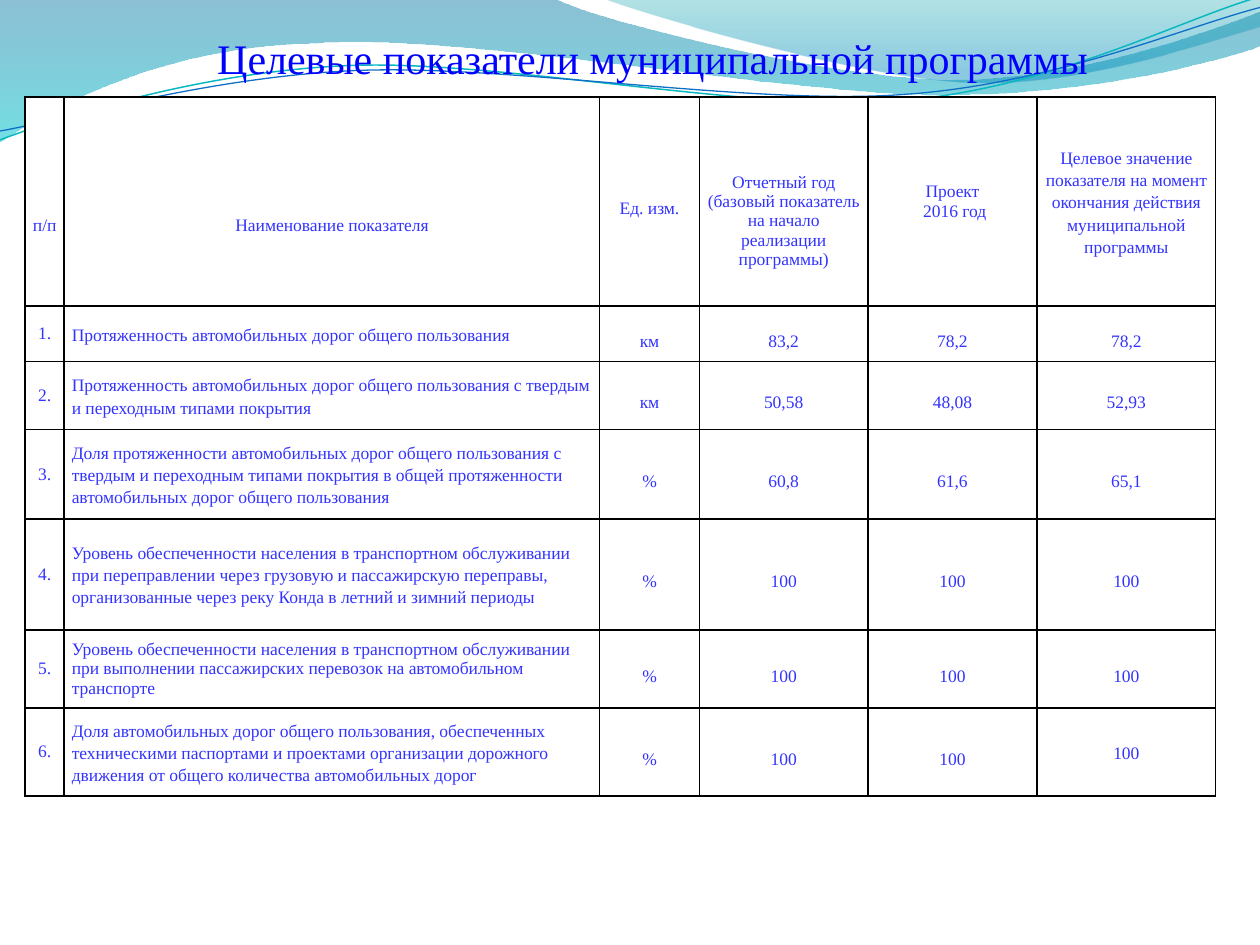
from dataclasses import dataclass
from math import cos, radians, sin

from lxml.etree import SubElement
from pptx import Presentation
from pptx.dml.color import RGBColor
from pptx.enum.text import MSO_ANCHOR, PP_ALIGN
from pptx.oxml.ns import qn
from pptx.util import Inches, Pt


@dataclass(frozen=True)
class Theme:
    font: str = "Times New Roman"
    title_size: float = 24
    cell_size: float = 10
    title_color: str = "0000FF"
    cell_color: str = "3333FF"
    cell_fill: str = "FFFFFF"
    border: str = "000000"
    border_width: float = 1
    line_pitch: float = 19.6
    loose: float = 1.15


THEME = Theme()

# Wave outlines in inches: a start point, then lines (1 point) and Bezier curves (3 points)
BANDS = [
    ((0, 0), [
        [(4.4, -0.01)],
        [(4.76, 0.17), (6.64, 0.63), (7.58, 0.63)],
        [(8.53, 0.63), (9.58, 0.26), (10, 0.09)],
        [(10.01, 0.36)],
        [(9.83, 0.44), (8.7, 0.76), (7.46, 0.75)],
        [(6.22, 0.75), (3.82, 0.28), (2.57, 0.34)],
        [(1.29, 0.36), (0.46, 0.83), (-0.01, 1.13)],
    ], [(0, "0074A1", 45), (1, "00C6CF", 55)]),
    ((4.79, -0.01), [
        [(5.09, 0.11), (6.82, 0.62), (7.69, 0.65)],
        [(8.56, 0.69), (9.61, 0.32), (10, 0.21)],
        [(10, 0)],
    ], [(0, "00A1A9", 30), (0.8, "008BBF", 45)]),
]
# Strands also have a centre, about which they are tilted
STRANDS = [
    ((0, 1.11), [
        [(0.48, 0.93), (1.58, 0.57), (2.77, 0.52)],
        [(3.95, 0.47), (5.93, 0.89), (7.13, 0.8)],
        [(8.33, 0.71), (9.38, 0.15), (9.98, -0.02)],
    ], (4.99, 0.58), "0AB8BF", 0.85),
    ((0, 1.04), [
        [(0.47, 0.96), (1.64, 0.61), (2.83, 0.56)],
        [(4.03, 0.51), (5.97, 0.84), (7.17, 0.75)],
        [(8.36, 0.67), (9.41, 0.21), (10, 0.06)],
    ], (5, 0.59), "0F6FC6", 0.75),
]
STRAND_TILT = -2.7

TITLE = "Целевые показатели муниципальной программы"
COLUMN_WIDTHS = [0.31, 4.25, 0.79, 1.34, 1.34, 1.42]
ROW_HEIGHTS = [1.66, 0.44, 0.54, 0.71, 0.88, 0.62, 0.7]
INDICATORS = [
    ["п/п", "Наименование показателя", "Ед. изм.",
     "Отчетный год\n(базовый показатель на начало реализации программы)",
     "Проект\n 2016 год",
     "Целевое значение показателя на момент окончания действия муниципальной программы"],
    ["1.", "Протяженность автомобильных дорог общего пользования",
     "км", "83,2", "78,2", "78,2"],
    ["2.", "Протяженность автомобильных дорог общего пользования с твердым и переходным "
     "типами покрытия", "км", "50,58", "48,08", "52,93"],
    ["3.", "Доля протяженности автомобильных дорог общего пользования с твердым и переходным "
     "типами покрытия в общей протяженности автомобильных дорог общего пользования",
     "%", "60,8", "61,6", "65,1"],
    ["4.", "Уровень обеспеченности населения в транспортном обслуживании при переправлении "
     "через грузовую и пассажирскую переправы, организованные через реку Конда в летний "
     "и зимний периоды", "%", "100", "100", "100"],
    ["5.", "Уровень обеспеченности населения в транспортном обслуживании при выполнении "
     "пассажирских перевозок на автомобильном транспорте", "%", "100", "100", "100"],
    ["6.", "Доля автомобильных дорог общего пользования, обеспеченных техническими паспортами "
     "и проектами организации дорожного движения от общего количества автомобильных дорог",
     "%", "100", "100", "100"],
]

# Line spacing by column, and the cells that depart from it
PITCH = Pt(THEME.line_pitch)
COLUMN_SPACING = [1.0, THEME.loose, PITCH, PITCH, PITCH, PITCH]
CELL_SPACING = {(0, 0): PITCH, (0, 1): PITCH, (0, 3): 1.0, (0, 4): 1.0,
                (0, 5): THEME.loose, (5, 1): 1.0, (6, 5): THEME.loose}
FLUSH_COLUMNS = (2, 5)
HEADER_DROP = {0: 0.27, 1: 0.27, 3: 0.31}


def style_text(paragraph, size, color, align):
    paragraph.alignment = align
    for run in paragraph.runs:
        run.font.name = THEME.font
        run.font.size = Pt(size)
        run.font.color.rgb = RGBColor.from_string(color)


def turn(point, center, degrees):
    angle = radians(degrees)
    dx, dy = point[0] - center[0], point[1] - center[1]
    return (center[0] + dx * cos(angle) - dy * sin(angle),
            center[1] + dx * sin(angle) + dy * cos(angle))


def add_outline(slide, left, top, start, segments, close, center=(0, 0), tilt=0):
    level = [turn(point, center, -tilt) for point in [start, *sum(segments, [])]]
    points = [(left + Inches(x), top + Inches(y)) for x, y in level]
    builder = slide.shapes.build_freeform(*points[0], scale=1.0)
    builder.add_line_segments(points[1:], close=close)
    outline = builder.convert_to_shape()
    outline.shadow.inherit = False
    outline.rotation = tilt
    # Merge each run of three points into one Bezier curve
    edges = iter(outline._element.findall(".//" + qn("a:lnTo")))
    for segment in segments:
        first, *others = [next(edges) for _ in segment]
        if others:
            curve = first.makeelement(qn("a:cubicBezTo"))
            first.addprevious(curve)
            for edge in (first, *others):
                curve.append(edge[0])
                edge.getparent().remove(edge)
    return outline


def add_waves(slide, left, top):
    # Translucent bands
    for start, segments, stops in BANDS:
        band = add_outline(slide, left, top, start, segments, close=True)
        band.line.fill.background()
        band.fill.gradient()
        band.fill.gradient_angle = 270
        for stop, (position, color, _) in zip(band.fill.gradient_stops, stops):
            stop.position = position
            stop.color.rgb = RGBColor.from_string(color)
        tints = band._element.spPr.findall(".//" + qn("a:srgbClr"))
        for tint, (_, _, opacity) in zip(tints, stops):
            SubElement(tint, qn("a:alpha"), val=str(opacity * 1000))
    # Thin strands
    for start, segments, center, color, width in STRANDS:
        strand = add_outline(slide, left, top, start, segments, False, center, STRAND_TILT)
        strand.fill.background()
        strand.line.color.rgb = RGBColor.from_string(color)
        strand.line.width = Pt(width)


def add_title(slide, left, top, width, height):
    frame = slide.shapes.add_textbox(left, top, width, height).text_frame
    frame.word_wrap = True
    frame.text = TITLE
    style_text(frame.paragraphs[0], THEME.title_size, THEME.title_color, PP_ALIGN.CENTER)


def add_borders(cell):
    properties = cell._tc.get_or_add_tcPr()
    for side in ("a:lnL", "a:lnR", "a:lnT", "a:lnB"):
        edge = SubElement(properties, qn(side), w=str(Pt(THEME.border_width)))
        SubElement(SubElement(edge, qn("a:solidFill")), qn("a:srgbClr"), val=THEME.border)


def fill_cell(cell, row, column, text):
    add_borders(cell)
    cell.fill.solid()
    cell.fill.fore_color.rgb = RGBColor.from_string(THEME.cell_fill)
    cell.vertical_anchor = MSO_ANCHOR.MIDDLE
    cell.margin_left = cell.margin_right = Inches(0 if column in FLUSH_COLUMNS else 0.06)
    cell.margin_top = Inches(HEADER_DROP.get(column, 0) if row == 0 else 0)
    cell.margin_bottom = 0
    cell.text_frame.text = text
    align = PP_ALIGN.LEFT if column == 1 and row > 0 else PP_ALIGN.CENTER
    for paragraph in cell.text_frame.paragraphs:
        paragraph.line_spacing = CELL_SPACING.get((row, column), COLUMN_SPACING[column])
        style_text(paragraph, THEME.cell_size, THEME.cell_color, align)


def add_indicators(slide, left, top, width, height):
    table = slide.shapes.add_table(len(ROW_HEIGHTS), len(COLUMN_WIDTHS),
                                   left, top, width, height).table
    table.first_row = table.horz_banding = False
    for column, share in zip(table.columns, COLUMN_WIDTHS):
        column.width = int(width * share / sum(COLUMN_WIDTHS))
    for row, share in zip(table.rows, ROW_HEIGHTS):
        row.height = int(height * share / sum(ROW_HEIGHTS))
    for r, texts in enumerate(INDICATORS):
        for c, text in enumerate(texts):
            fill_cell(table.cell(r, c), r, c, text)


def main():
    deck = Presentation()
    deck.slide_width, deck.slide_height = Inches(10), Inches(7.5)
    slide = deck.slides.add_slide(deck.slide_layouts[6])
    add_waves(slide, Inches(0), Inches(0))
    add_indicators(slide, Inches(0.2), Inches(0.77), Inches(9.45), Inches(5.55))
    add_title(slide, Inches(1.54), Inches(0.21), Inches(7.28), Inches(0.5))
    deck.save("out.pptx")


if __name__ == "__main__":
    main()
